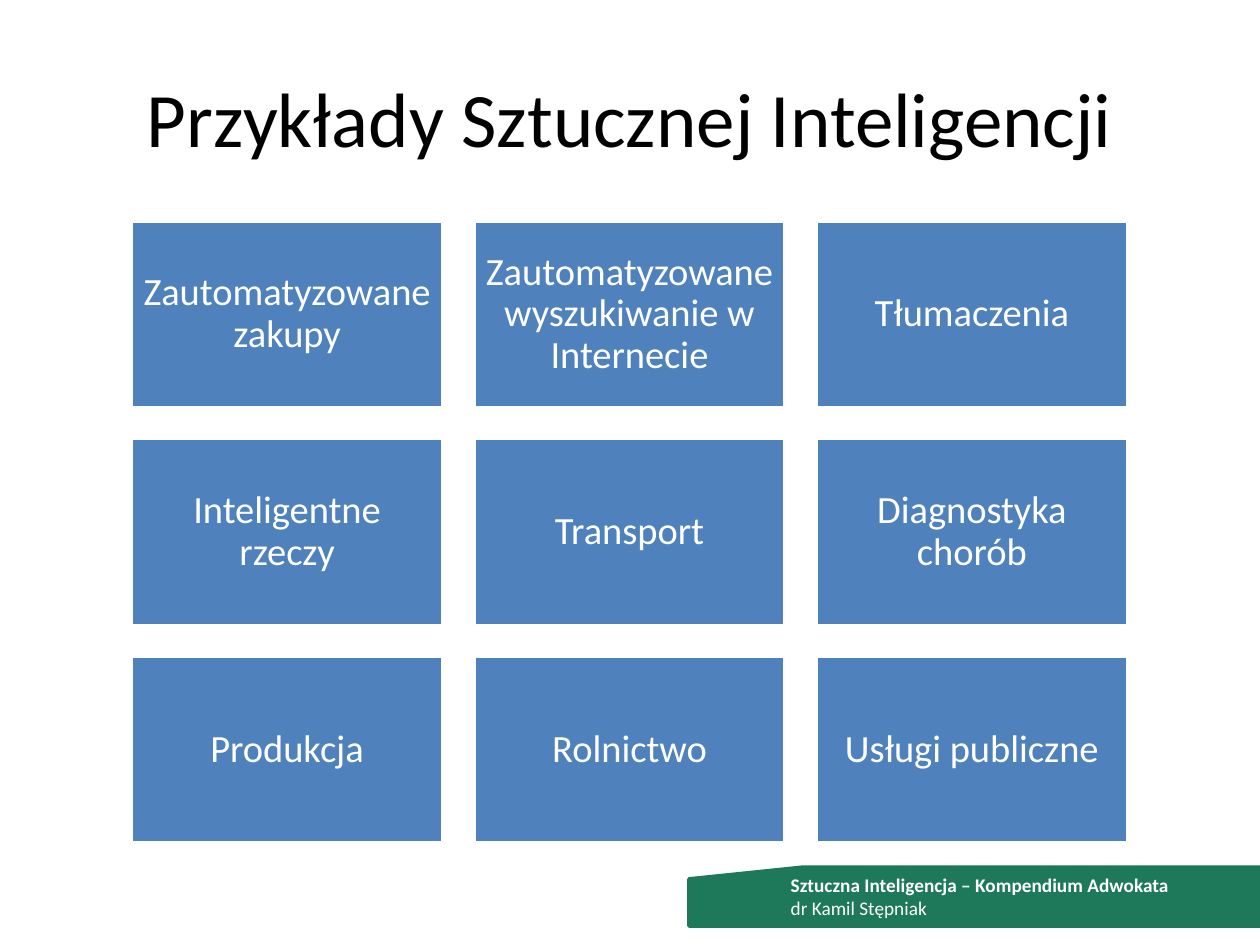
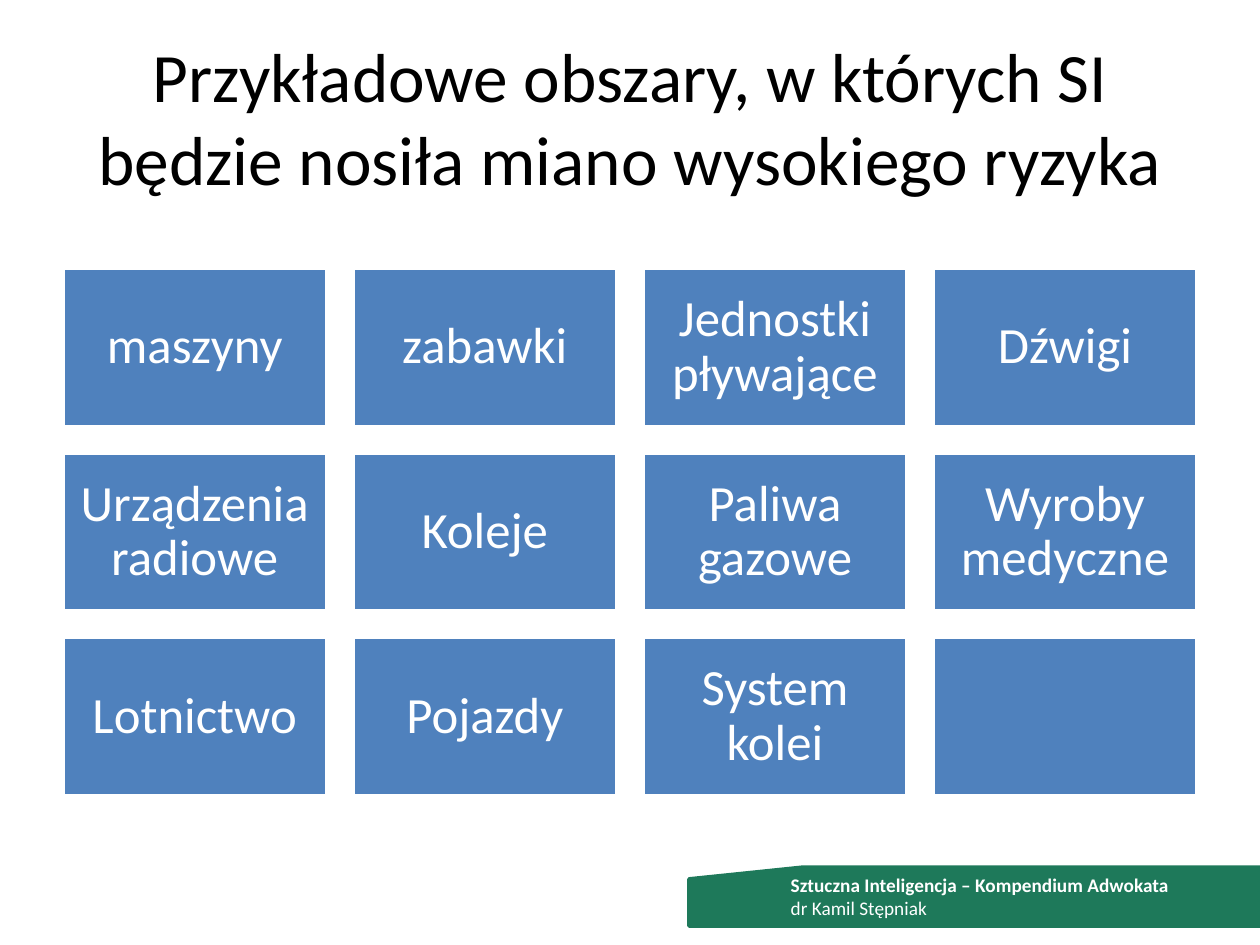
from itertools import product

from pptx import Presentation
from pptx.dml.color import RGBColor
from pptx.enum.shapes import MSO_SHAPE
from pptx.enum.text import MSO_ANCHOR, PP_ALIGN
from pptx.util import Cm, Pt

BLACK = RGBColor(0x00, 0x00, 0x00)
WHITE = RGBColor(0xFF, 0xFF, 0xFF)
BLUE = RGBColor(0x4F, 0x81, 0xBD)
GREEN = RGBColor(0x1E, 0x79, 0x5A)

FONT = "Calibri"
TITLE_BOX = (1.27, 0.76, 22.86, 3.18)
FOOTER_BOX = (13.89, 17.48, 11.51, 1.19)
FOOTER_INDENT = 1.8
TILE_RATIO = 0.6
GAP_RATIO = 0.1

SLIDES = [
    {
        "title": "Przykłady Sztucznej Inteligencji",
        "title_size": 44,
        "grid_box": (2.65, 4.45, 20.08),
        "columns": 3,
        "tile_size": 22,
        "inset": 0.23,
        "tiles": [
            "Zautomatyzowane zakupy",
            "Zautomatyzowane wyszukiwanie w Internecie",
            "Tłumaczenia",
            "Inteligentne rzeczy",
            "Transport",
            "Diagnostyka chorób",
            "Produkcja",
            "Rolnictwo",
            "Usługi publiczne",
        ],
    },
    {
        "title": "Przykładowe obszary, w których SI będzie nosiła miano wysokiego ryzyka",
        "title_size": 39.6,
        "grid_box": (1.27, 5.41, 22.86),
        "columns": 4,
        "tile_size": 29,
        "inset": 0.3,
        "tiles": [
            "maszyny",
            "zabawki",
            "Jednostki pływające",
            "Dźwigi",
            "Urządzenia radiowe",
            "Koleje",
            "Paliwa gazowe",
            "Wyroby medyczne",
            "Lotnictwo",
            "Pojazdy",
            "System kolei",
            "",
        ],
    },
]


def set_attributes(target, values):
    """Set every attribute named in a dict of format values."""
    for name, value in values.items():
        setattr(target, name, value)


def add_span(para, text, size, color, bold=False):
    """Append one formatted span of text to a paragraph."""
    span = para.add_run()
    span.text = text
    set_attributes(span.font, {"name": FONT, "size": Pt(size), "bold": bold})
    span.font.color.rgb = color


def add_panel(page, kind, box, fill, line):
    """Add a flat preset shape with a solid fill and outline."""
    panel = page.shapes.add_shape(kind, *map(Cm, box))
    panel.shadow.inherit = False
    panel.fill.solid()
    panel.fill.fore_color.rgb = fill
    panel.line.color.rgb = line
    panel.line.width = Pt(2)
    return panel


def add_text_box(page, box, anchor):
    """Add a wrapping text box and return its text frame."""
    frame = page.shapes.add_textbox(*map(Cm, box)).text_frame
    set_attributes(frame, {"word_wrap": True, "vertical_anchor": anchor})
    return frame


def add_title(page, box, text, size):
    """Add the centred slide title."""
    para = add_text_box(page, box, MSO_ANCHOR.MIDDLE).paragraphs[0]
    para.alignment = PP_ALIGN.CENTER
    add_span(para, text, size, BLACK)


def add_tile(page, box, text, size, inset):
    """Add one blue tile with its centred label."""
    frame = add_panel(page, MSO_SHAPE.RECTANGLE, box, BLUE, WHITE).text_frame
    sides = ("left", "top", "right", "bottom")
    margins = {f"margin_{side}": Cm(inset) for side in sides}
    set_attributes(
        frame, {"word_wrap": True, "vertical_anchor": MSO_ANCHOR.MIDDLE, **margins}
    )
    para = frame.paragraphs[0]
    set_attributes(para, {"alignment": PP_ALIGN.CENTER, "line_spacing": 0.9})
    if text:
        add_span(para, text, size, WHITE)


def add_tile_grid(page, box, columns, labels, size, inset):
    """Fill a box of given width with equally spaced tiles, row by row."""
    left, top, total_width = box
    width = total_width / (columns + GAP_RATIO * (columns - 1))
    height = width * TILE_RATIO
    gap = width * GAP_RATIO
    cells = product(range(len(labels) // columns), range(columns))
    for (row, column), label in zip(cells, labels):
        tile_box = (
            left + column * (width + gap),
            top + row * (height + gap),
            width,
            height,
        )
        add_tile(page, tile_box, label, size, inset)


def add_footer(page, box):
    """Add the green footer band with the course name and the author."""
    left, top, width, height = box
    add_panel(page, MSO_SHAPE.FLOWCHART_CARD, box, GREEN, GREEN)
    text_box = (left + FOOTER_INDENT, top, width - FOOTER_INDENT, height)
    para = add_text_box(page, text_box, MSO_ANCHOR.TOP).paragraphs[0]
    add_span(para, "Sztuczna Inteligencja – Kompendium Adwokata", 11, WHITE, True)
    para.add_line_break()
    add_span(para, "dr Kamil Stępniak", 11, WHITE)


def add_tile_slide(deck, content):
    """Build one slide with a title, a grid of tiles and the footer."""
    page = deck.slides.add_slide(deck.slide_layouts[6])
    add_title(page, TITLE_BOX, content["title"], content["title_size"])
    add_tile_grid(
        page,
        content["grid_box"],
        content["columns"],
        content["tiles"],
        content["tile_size"],
        content["inset"],
    )
    add_footer(page, FOOTER_BOX)


def main():
    """Build and save the deck."""
    deck = Presentation()
    set_attributes(deck, {"slide_width": Cm(25.4), "slide_height": Cm(19.05)})
    for content in SLIDES:
        add_tile_slide(deck, content)
    deck.save("out.pptx")


if __name__ == "__main__":
    main()
